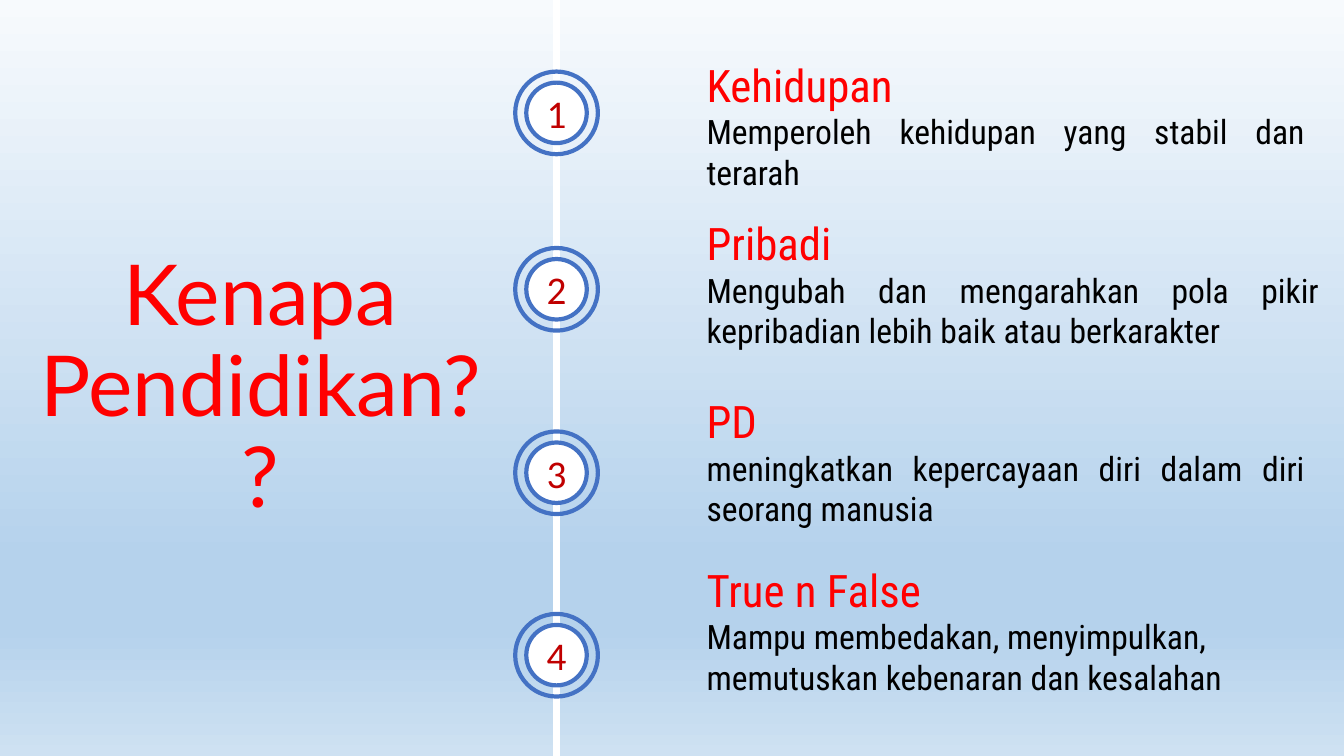
from copy import deepcopy
from dataclasses import dataclass

from lxml.etree import SubElement
from pptx import Presentation
from pptx.dml.color import RGBColor
from pptx.enum.shapes import MSO_CONNECTOR, MSO_SHAPE
from pptx.enum.text import MSO_ANCHOR, MSO_AUTO_SIZE, PP_ALIGN
from pptx.oxml.ns import qn
from pptx.util import Inches, Pt


@dataclass(frozen=True)
class Theme:
    red: str = "FF0000"
    dark: str = "C00000"
    blue: str = "4472C4"
    white: str = "FFFFFF"
    black: str = "000000"
    sky: tuple = ((0, "F7FAFD"), (0.74, "B5D2EC"), (0.83, "B5D2EC"), (1, "CEE1F2"))
    title: int = 60
    head: int = 32
    num: int = 28
    body: int = 24


theme = Theme()
JUST, LEFT = PP_ALIGN.JUSTIFY, PP_ALIGN.LEFT
# ring top, text top, text width, heading, detail, detail alignment
items = [
    (0.71, 0.52, 6.13, "Kehidupan",
     "Memperoleh kehidupan yang stabil dan terarah", JUST),
    (2.46, 2.09, 6.27, "Pribadi",
     "Mengubah dan mengarahkan pola pikir kepribadian lebih baik atau berkarakter", JUST),
    (4.28, 3.86, 6.13, "PD",
     "meningkatkan kepercayaan diri dalam diri seorang manusia", JUST),
    (6.09, 5.53, 6.13, "True n False",
     "Mampu membedakan, menyimpulkan, memutuskan kebenaran dan kesalahan", LEFT),
]
axis = 5.52
ring_size, dot_size = 0.82, 0.6


def style(para, font, size, color, align):
    para.alignment = align
    for run in para.runs:
        run.font.name = font
        run.font.size = Pt(size)
        run.font.color.rgb = RGBColor.from_string(color)


def add_ring(group, top, size):
    """Add a blue-edged circle centred on the axis."""
    ring = group.shapes.add_shape(
        MSO_SHAPE.OVAL, Inches(axis - size / 2), Inches(top), Inches(size), Inches(size))
    ring.shadow.inherit = False
    ring.fill.background()
    ring.line.color.rgb = RGBColor.from_string(theme.blue)
    ring.line.width = Pt(3)
    return ring


deck = Presentation()
deck.slide_width, deck.slide_height = Inches(13.33), Inches(7.5)
slide = deck.slides.add_slide(deck.slide_layouts[5])

# Background
fill = slide.background.fill
fill.gradient()
fill.gradient_angle = 270
stops = slide.element.find(".//" + qn("a:gsLst"))
while len(stops) < len(theme.sky):
    stops.append(deepcopy(stops[0]))
for stop, (place, color) in zip(fill.gradient_stops, theme.sky):
    stop.position = place
    stop.color.rgb = RGBColor.from_string(color)

# Title
title = slide.shapes.title
title.left, title.top = Inches(0.16), Inches(2.46)
title.width, title.height = Inches(4.85), Inches(2.36)
frame = title.text_frame
frame.text = "Kenapa Pendidikan??"
frame.word_wrap = True
frame.auto_size = MSO_AUTO_SIZE.NONE
frame.vertical_anchor = MSO_ANCHOR.TOP
para = frame.paragraphs[0]
para.line_spacing = 0.9
para.space_before = Pt(10)
style(para, "Lato", theme.title, theme.red, PP_ALIGN.CENTER)

# Timeline
line = slide.shapes.add_connector(
    MSO_CONNECTOR.STRAIGHT, Inches(axis), 0, Inches(axis), deck.slide_height)
line.line.color.rgb = RGBColor.from_string(theme.white)
line.line.width = Pt(4.5)
SubElement(line.element.spPr, qn("a:effectLst"))

# Numbered reasons
for num, (top, text_top, width, head, detail, align) in enumerate(items, 1):
    box = slide.shapes.add_textbox(
        Inches(6.91), Inches(text_top), Inches(width), Inches(1.45))
    frame = box.text_frame
    frame.word_wrap = True
    frame.auto_size = MSO_AUTO_SIZE.SHAPE_TO_FIT_TEXT
    para = frame.paragraphs[0]
    para.text = head
    style(para, "Roboto Condensed", theme.head, theme.red, JUST)
    para = frame.add_paragraph()
    para.text = detail
    style(para, "Roboto Condensed", theme.body, theme.black, align)

    group = slide.shapes.add_group_shape()
    add_ring(group, top, ring_size)
    dot = add_ring(group, top + (ring_size - dot_size) / 2, dot_size)
    dot.fill.solid()
    dot.fill.fore_color.rgb = RGBColor.from_string(theme.white)
    frame = dot.text_frame
    frame.text = str(num)
    frame.margin_left = frame.margin_right = 0
    frame.vertical_anchor = MSO_ANCHOR.MIDDLE
    style(frame.paragraphs[0], "Calibri", theme.num, theme.dark, PP_ALIGN.CENTER)

deck.save("out.pptx")
